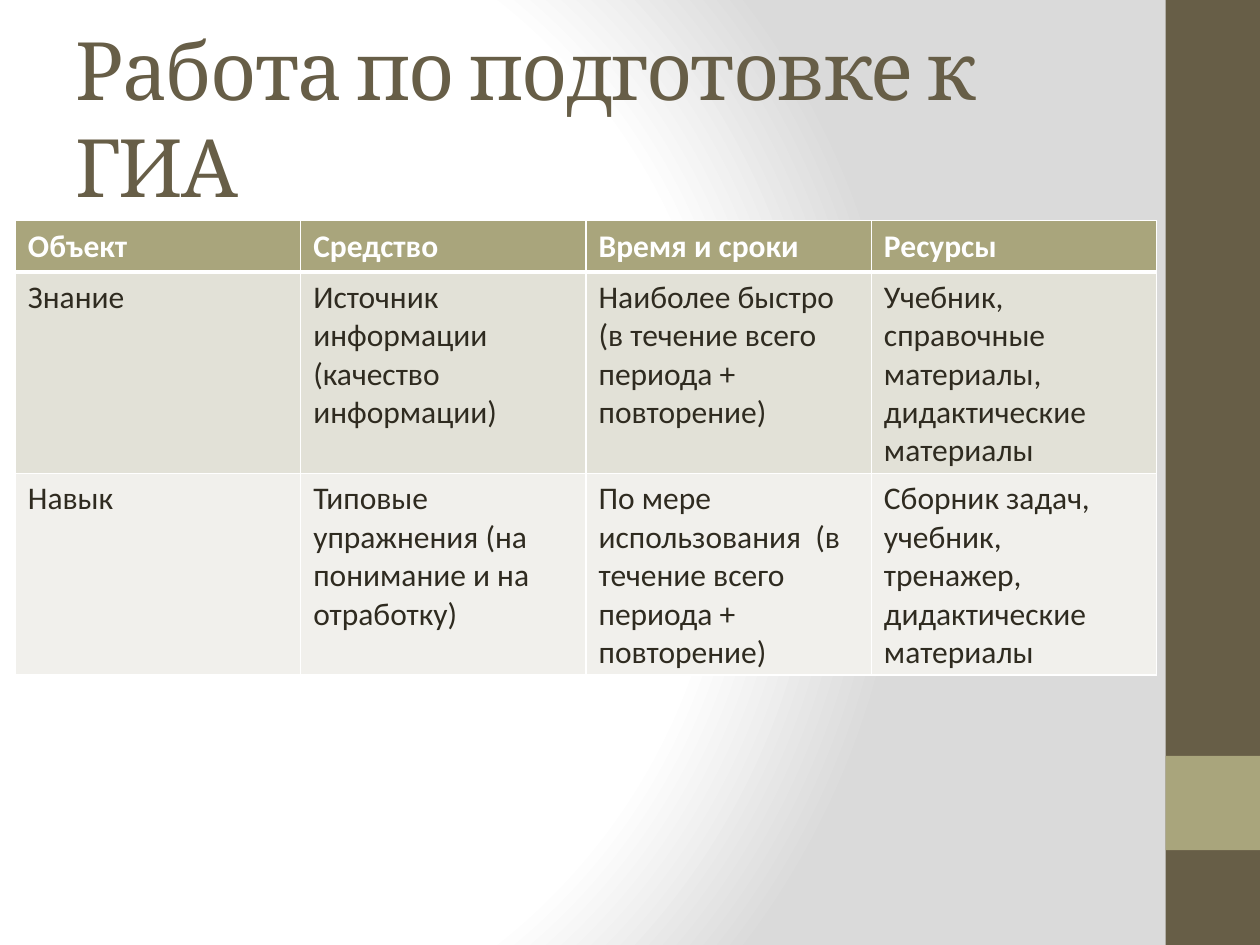
from pptx import Presentation
from pptx.dml.color import RGBColor
from pptx.enum.shapes import MSO_SHAPE as SHAPE
from pptx.enum.text import MSO_ANCHOR as ANCHOR
from pptx.oxml import parse_xml
from pptx.oxml.ns import nsdecls
from pptx.util import Cm, Pt

COLORS = {
    "brown": "675E47", "olive": "A9A57C", "text": "2F2B20",
    "band1": "E2E1D7", "band2": "F1F0EC", "white": "FFFFFF", "gray": "DADADA",
}


def write(tf, text, font="Calibri", size=18, color="text", bold=False, spacing=None):
    r = tf.paragraphs[0].add_run()
    r.text = text
    r.font.name, r.font.size, r.font.bold = font, Pt(size), bold
    r.font.color.rgb = RGBColor.from_string(COLORS[color])
    if spacing is not None:
        r._r.get_or_add_rPr().set("spc", str(spacing * 100))


def set_border(cell, side, width):
    cell._tc.get_or_add_tcPr().append(parse_xml(
        f'<a:{side} {nsdecls("a")} w="{Pt(width)}"><a:solidFill>'
        f'<a:srgbClr val="{COLORS["white"]}"/></a:solidFill></a:{side}>'))


prs = Presentation()
prs.slide_width, prs.slide_height = Cm(25.4), Cm(19.05)
s = prs.slides.add_slide(prs.slide_layouts[6])

# Background: radial gradient
stops = "".join(f'<a:gs pos="{pos * 1000}"><a:srgbClr val="{COLORS[c]}"/></a:gs>'
                for pos, c in [(0, "white"), (75, "white"), (100, "gray")])
s._element.cSld.insert(0, parse_xml(
    f'<p:bg {nsdecls("p", "a")}><p:bgPr><a:gradFill rotWithShape="1">'
    f'<a:gsLst>{stops}</a:gsLst><a:path path="circle">'
    '<a:fillToRect l="20000" t="50000" r="100000" b="50000"/></a:path>'
    '</a:gradFill><a:effectLst/></p:bgPr></p:bg>'))

# Side bar and its accent square
for top, height, color in [(0, 19.05, "brown"), (15.24, 1.9, "olive")]:
    sp = s.shapes.add_shape(SHAPE.RECTANGLE, Cm(23.5), Cm(top), Cm(1.9), Cm(height))
    sp.shadow.inherit = False
    sp.fill.solid()
    sp.fill.fore_color.rgb = RGBColor.from_string(COLORS[color])
    sp.line.fill.background()

# Title
tf = s.shapes.add_textbox(Cm(1.27), Cm(0.76), Cm(21.16), Cm(3.18)).text_frame
tf.word_wrap = True
tf.vertical_anchor = ANCHOR.MIDDLE
write(tf, "Работа по подготовке к ГИА", font="Cambria", size=46, color="brown", spacing=-1)

# Table
rows = [
    ["Объект", "Средство", "Время и сроки", "Ресурсы"],
    ["Знание", "Источник информации (качество информации)",
     "Наиболее быстро (в течение всего периода + повторение)",
     "Учебник, справочные материалы, дидактические материалы"],
    ["Навык", "Типовые упражнения (на понимание и на отработку)",
     "По мере использования  (в течение всего периода + повторение)",
     "Сборник задач, учебник, тренажер, дидактические материалы"],
]
fills = ["olive", "band1", "band2"]
heights = [1.03, 4.06, 4.06]
table = s.shapes.add_table(len(rows), len(rows[0]), Cm(0.31), Cm(4.45),
                           Cm(23.01), Cm(sum(heights))).table
for i, row in enumerate(rows):
    table.rows[i].height = Cm(heights[i])
    header = i == 0
    for j, text in enumerate(row):
        cell = table.cell(i, j)
        write(cell.text_frame, text, color="white" if header else "text", bold=header)
        for side in ("lnL", "lnR", "lnT", "lnB"):
            # The line under the header is thicker
            thick = (i, side) in [(0, "lnB"), (1, "lnT")]
            set_border(cell, side, 3 if thick else 1)
        cell.fill.solid()
        cell.fill.fore_color.rgb = RGBColor.from_string(COLORS[fills[i]])

prs.save("out.pptx")
